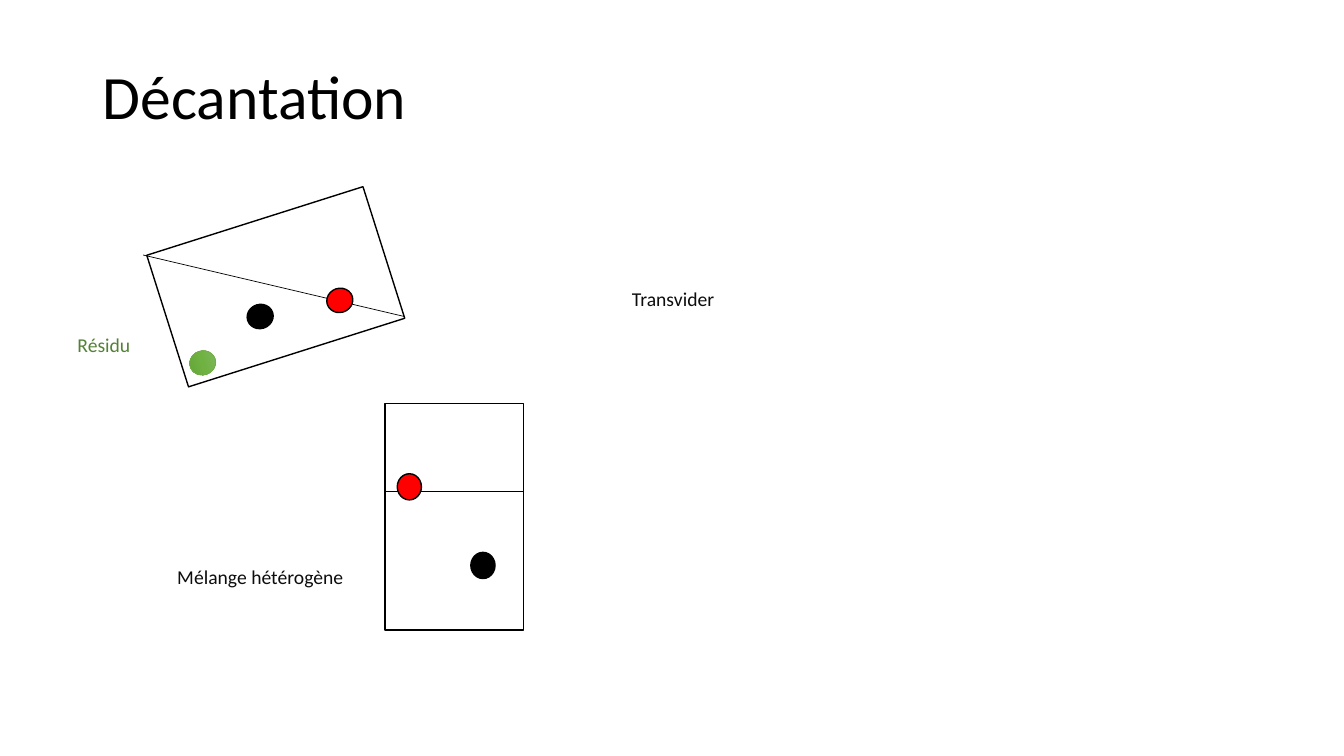
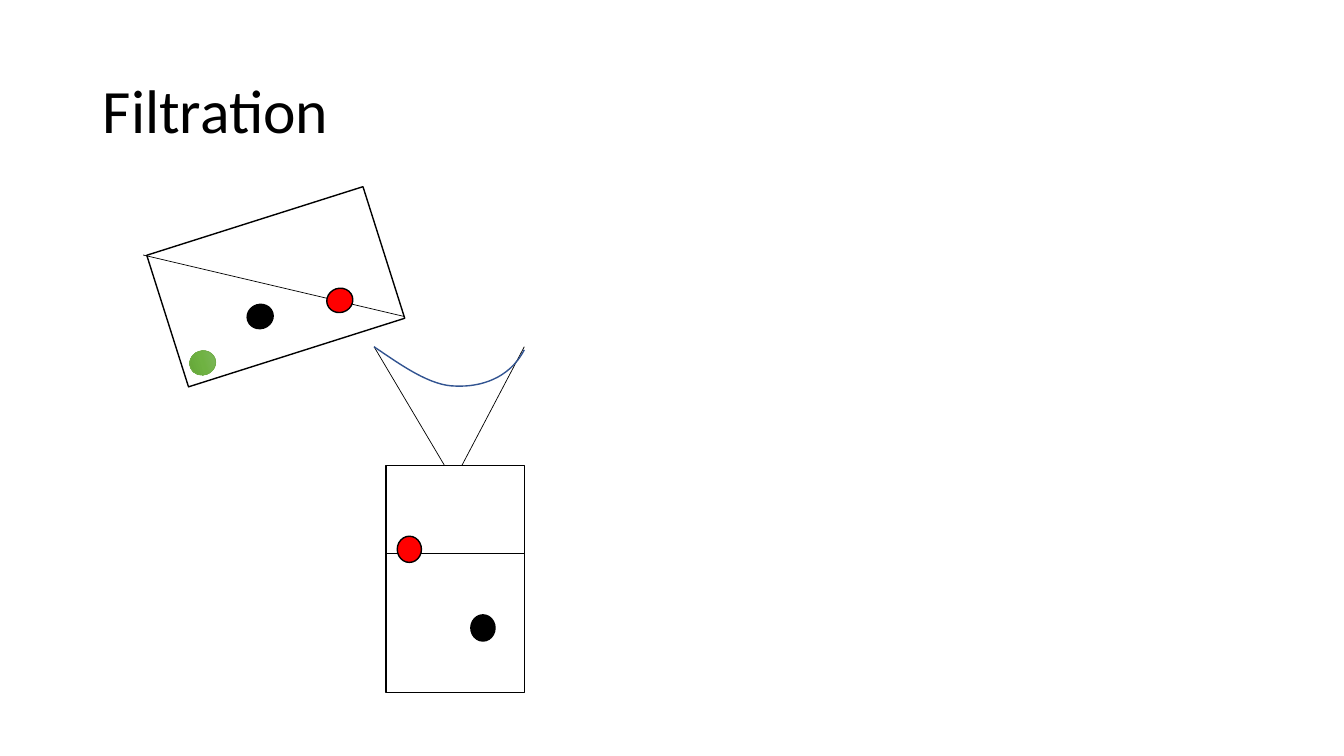
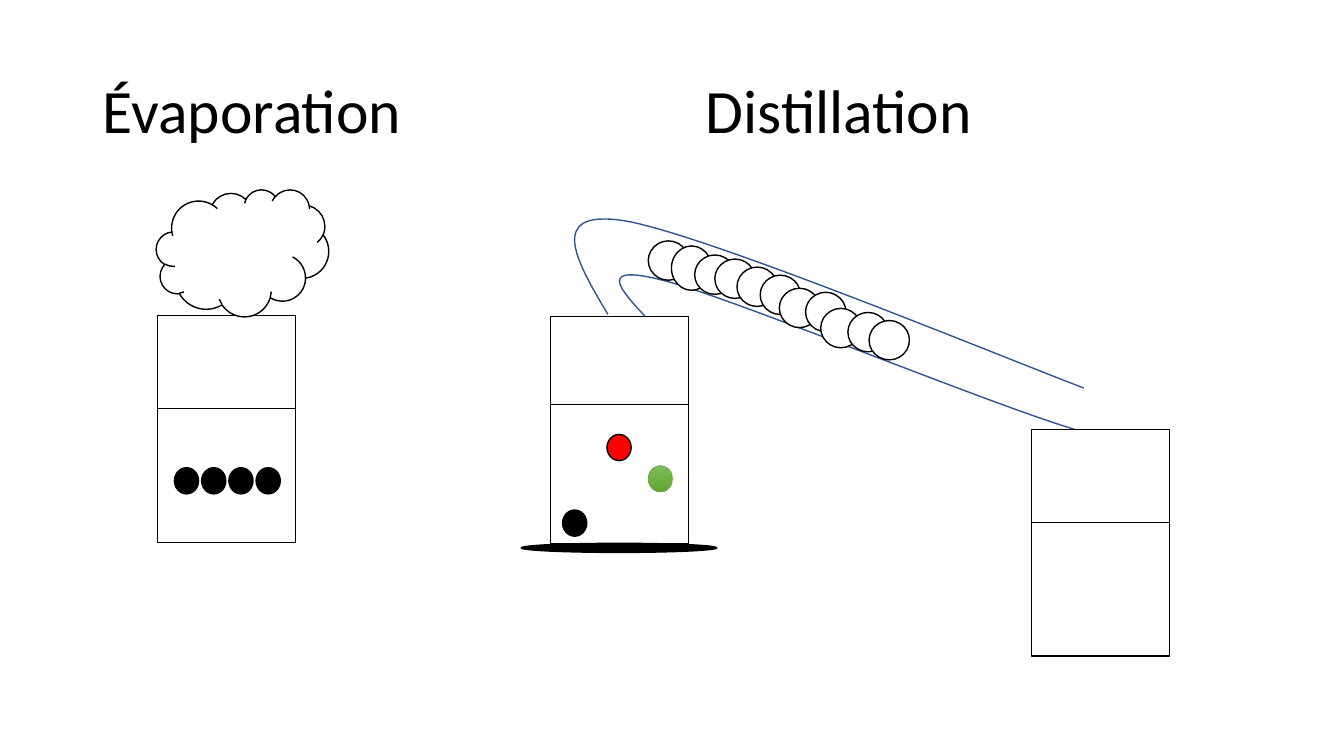
from copy import deepcopy
from typing import NamedTuple

from lxml import etree
from pptx import Presentation
from pptx import util as u
from pptx.dml.color import RGBColor
from pptx.enum import shapes, text
from pptx.oxml.ns import qn

PX = 9144  # EMU per px, 100 px to the inch
FONT = "Calibri"
BLACK, WHITE, RED = "000000", "FFFFFF", "FF0000"
LABEL_INK, RESIDUE_INK = "0D0D0D", "548235"
TUBE_BLUE = "325491"
GREEN_EDGE = "70AD47"
GREEN_STOPS = ((0, "81B861"), (0.5, "6FB242"), (1, "62A336"))

BEAKER_WIDTH, BEAKER_HEIGHT = 137, 225
DOT_WIDTH, DOT_HEIGHT = 24, 26
BUBBLE = 40
TILT = 72.4
FRAME_FORMAT = {
    "word_wrap": True,
    "auto_size": text.MSO_AUTO_SIZE.NONE,
    "vertical_anchor": text.MSO_ANCHOR.MIDDLE,
}
PARAGRAPH_FORMAT = {"line_spacing": 0.9, "alignment": text.PP_ALIGN.LEFT}

Point = tuple[int, int]
AutoShape = shapes.MSO_SHAPE


class Box(NamedTuple):
    left: int
    top: int
    width: int
    height: int


class Dot(NamedTuple):
    """A particle; without a colour it gets the green gradient."""
    left: int
    top: int
    colour: str | None = None


class Beaker(NamedTuple):
    left: int
    top: int
    level: int
    dots: tuple[Dot, ...] = ()


class Label(NamedTuple):
    words: str
    box: Box
    colour: str = LABEL_INK


TILTED_BEAKER = Box(205, 172, BEAKER_WIDTH, BEAKER_HEIGHT)
TILTED_SURFACE = ((142, 253), (401, 314))
TILTED_DOTS = (Dot(246, 301, BLACK), Dot(325, 285, RED), Dot(189, 347))
DECANTED = Beaker(382, 400, 87, (Dot(467, 548, BLACK), Dot(394, 470, RED)))
DECANTATION_LABELS = (
    Label("Résidu", Box(67, 312, 94, 63), RESIDUE_INK),
    Label("Mélange hétérogène", Box(166, 542, 217, 63)),
    Label("Transvider", Box(617, 266, 217, 63)),
)

FILTRATE = Beaker(383, 462, 87, (Dot(467, 610, BLACK), Dot(394, 532, RED)))
FUNNEL_SIDES = (((371, 344), (441, 462)), ((520, 344), (458, 462)))
FILTER_RIM = ((371, 344), (399, 363), (427, 383), (452, 383),
              (476, 384), (505, 376), (520, 347))

EVAPORATED = Beaker(156, 313, 92, tuple(Dot(173 + 27 * i, 464, BLACK) for i in range(4)))
VAPOUR = Box(155, 188, 171, 126)
BOILER = Beaker(546, 314, 87, (Dot(558, 506, BLACK), Dot(602, 431, RED), Dot(643, 462)))
HOTPLATE = Box(517, 539, 194, 9)
TUBE_WALLS = (
    ((603, 312), (572, 260), (541, 207), (619, 219), (698, 232), (991, 353), (1075, 385)),
    ((640, 314), (615, 287), (590, 260), (661, 279), (732, 298), (982, 401), (1066, 426)),
)
COOLANT = ((643, 239), (666, 244), (689, 253), (709, 257), (731, 265), (754, 273),
           (773, 286), (799, 290), (814, 306), (841, 310), (862, 318))
TALL_BUBBLE, TALL_HEIGHT = 1, 44
DISTILLATE = Beaker(1023, 426, 92)
SECOND_TITLE_TAB = 598


def rgb(colour: str) -> RGBColor:
    return RGBColor.from_string(colour)


def px(*lengths: int) -> list[u.Emu]:
    return [u.Emu(length * PX) for length in lengths]


def set_line(item, colour: str, points: float) -> None:
    item.line.color.rgb = rgb(colour)
    item.line.width = u.Pt(points)


def write(frame, words: str, size: int, colour: str) -> None:
    frame.text = words
    paragraph = frame.paragraphs[0]
    font = paragraph.runs[0].font
    font_format = {"name": FONT, "size": u.Pt(size), "bold": False}
    for target, values in ((frame, FRAME_FORMAT), (paragraph, PARAGRAPH_FORMAT),
                           (font, font_format)):
        for attribute, value in values.items():
            setattr(target, attribute, value)
    font.color.rgb = rgb(colour)


def add_titled_slide(deck, words: str, top: int = 40):
    slide = deck.slides.add_slide(deck.slide_layouts[5])
    title = slide.shapes.title
    title.left, title.top, title.width, title.height = px(92, top, 1150, 145)
    write(title.text_frame, words, 44, BLACK)
    return slide


def add_tab_stop(paragraph, position: int) -> None:
    properties = paragraph._p.get_or_add_pPr()
    stops = etree.SubElement(properties, qn("a:tabLst"))
    etree.SubElement(stops, qn("a:tab"), pos=str(position * PX), algn="l")


def add_label(slide, label: Label) -> None:
    frame = slide.shapes.add_textbox(*px(*label.box)).text_frame
    write(frame, label.words, 14, label.colour)


def add_outlined(slide, kind: AutoShape, box: Box, fill: str = WHITE, rotation: float = 0):
    shape = slide.shapes.add_shape(kind, *px(*box))
    shape.rotation = rotation
    shape.shadow.inherit = False
    shape.fill.solid()
    shape.fill.fore_color.rgb = rgb(fill)
    set_line(shape, BLACK, 1)
    return shape


def add_line(slide, start: Point, end: Point) -> None:
    line = slide.shapes.add_connector(shapes.MSO_CONNECTOR.STRAIGHT, *px(*start, *end))
    set_line(line, BLACK, 0.5)
    etree.SubElement(line._element.spPr, qn("a:effectLst"))


def fill_green(shape) -> None:
    shape.fill.gradient()
    shape.fill.gradient_angle = 270
    stops = shape._element.spPr.find(".//" + qn("a:gsLst"))
    stops.append(deepcopy(stops[0]))
    for stop, (position, colour) in zip(shape.fill.gradient_stops, GREEN_STOPS):
        stop.position = position
        stop.color.rgb = rgb(colour)
    set_line(shape, GREEN_EDGE, 0.5)


def add_dots(slide, dots: tuple[Dot, ...], rotation: float = 0) -> None:
    for dot in dots:
        box = Box(dot.left, dot.top, DOT_WIDTH, DOT_HEIGHT)
        shape = add_outlined(slide, AutoShape.FLOWCHART_CONNECTOR, box,
                             dot.colour or WHITE, rotation)
        if dot.colour is None:
            fill_green(shape)


def add_beaker(slide, beaker: Beaker) -> None:
    left, top, level, dots = beaker
    add_outlined(slide, AutoShape.RECTANGLE, Box(left, top, BEAKER_WIDTH, BEAKER_HEIGHT))
    add_line(slide, (left, top + level), (left + BEAKER_WIDTH, top + level))
    add_dots(slide, dots)


def add_tilted_beaker(slide) -> None:
    add_outlined(slide, AutoShape.RECTANGLE, TILTED_BEAKER, rotation=TILT)
    add_line(slide, *TILTED_SURFACE)
    add_dots(slide, TILTED_DOTS, TILT)


def bezier(controls: tuple[Point, ...], t: float) -> tuple[float, float]:
    """Point at t on the cubic through four controls."""
    weights = ((1 - t) ** 3, 3 * t * (1 - t) ** 2, 3 * t ** 2 * (1 - t), t ** 3)
    x, y = (sum(w * c[axis] for w, c in zip(weights, controls)) for axis in (0, 1))
    return x, y


def add_curve(slide, controls: tuple[Point, ...]) -> None:
    """Draw joined cubics in a frame fitted to their true extent."""
    starts = range(0, len(controls) - 1, 3)
    samples = [bezier(controls[i:i + 4], step / 40) for i in starts for step in range(41)]
    points = [(round(x * PX), round(y * PX)) for x, y in samples]
    builder = slide.shapes.build_freeform(*points[0])
    builder.add_line_segments(points[1:], close=False)
    curve = builder.convert_to_shape()
    outline = curve._element.spPr.find(".//" + qn("a:path"))
    for segment in outline.findall(qn("a:lnTo")):
        outline.remove(segment)
    for i in starts:
        cubic = etree.SubElement(outline, qn("a:cubicBezTo"))
        for x, y in controls[i + 1:i + 4]:
            etree.SubElement(cubic, qn("a:pt"), x=str(x * PX - curve.left),
                             y=str(y * PX - curve.top))
    curve.shadow.inherit = False
    curve.fill.background()
    set_line(curve, TUBE_BLUE, 1)


def build_decantation(deck) -> None:
    slide = add_titled_slide(deck, "Décantation", top=26)
    add_tilted_beaker(slide)
    add_beaker(slide, DECANTED)
    for label in DECANTATION_LABELS:
        add_label(slide, label)


def build_filtration(deck) -> None:
    slide = add_titled_slide(deck, "Filtration")
    add_tilted_beaker(slide)
    for side in FUNNEL_SIDES:
        add_line(slide, *side)
    add_curve(slide, FILTER_RIM)
    add_beaker(slide, FILTRATE)


def build_evaporation_and_distillation(deck) -> None:
    slide = add_titled_slide(deck, "Évaporation\tDistillation")
    add_tab_stop(slide.shapes.title.text_frame.paragraphs[0], SECOND_TITLE_TAB)
    add_beaker(slide, EVAPORATED)
    add_outlined(slide, AutoShape.CLOUD, VAPOUR)
    add_beaker(slide, BOILER)
    add_outlined(slide, AutoShape.OVAL, HOTPLATE, BLACK)
    for wall in TUBE_WALLS:
        add_curve(slide, wall)
    for i, (left, top) in enumerate(COOLANT):
        height = TALL_HEIGHT if i == TALL_BUBBLE else BUBBLE - 1
        add_outlined(slide, AutoShape.FLOWCHART_CONNECTOR, Box(left, top, BUBBLE, height))
    add_beaker(slide, DISTILLATE)


def main() -> None:
    deck = Presentation()
    deck.slide_width, deck.slide_height = px(1333, 750)
    build_decantation(deck)
    build_filtration(deck)
    build_evaporation_and_distillation(deck)
    deck.save("out.pptx")


if __name__ == "__main__":
    main()
